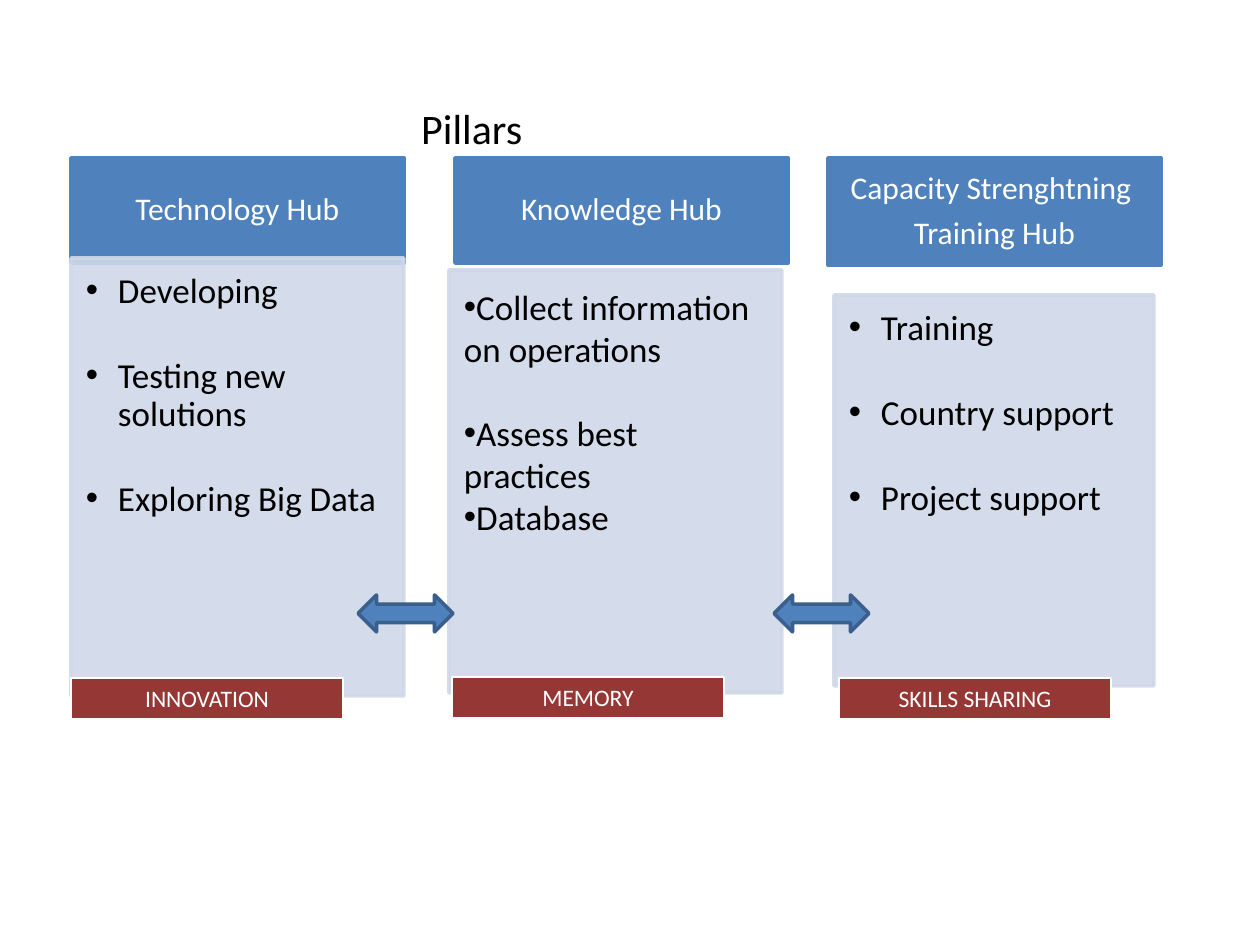
from lxml import etree
from pptx import Presentation
from pptx.dml.color import RGBColor
from pptx.enum.shapes import MSO_SHAPE as SHAPE
from pptx.enum.text import MSO_ANCHOR as ANCHOR, MSO_AUTO_SIZE as AUTO, PP_ALIGN as ALIGN
from pptx.oxml.ns import qn
from pptx.util import Emu, Pt

BLUE, PALE, RED, EDGE = "4F81BD", "D0D8E8", "953735", "3A5F8C"
WHITE, BLACK = "FFFFFF", "000000"
HEADER_INSETS = (18, 10, 18, 10)
PANEL_INSETS = (15, 15, 20, 21)
LABEL_INSETS = (13, 6, 13, 6)

HEADERS = [
    ((71, 158, 333, 105), ["Technology Hub"]),
    ((455, 158, 333, 105), ["Knowledge Hub"]),
    ((828, 158, 333, 107), ["Capacity Strenghtning ", "Training Hub"]),
]
PANELS = [
    (1, (71, 258, 333, 438), 32, 0.9,
     [("Developing", 0), ("Testing new solutions", 27), ("Exploring Big Data", 27)]),
    (2, (449, 270, 333, 423), 0, 1.0,
     [("Collect information on operations", 0), ("Assess best practices", 24),
      ("Database", 0)]),
    (4, (834, 295, 320, 391), 32, 0.9,
     [("Training", 0), ("Country support", 27), ("Project support", 27)]),
]
LABELS = [(71, 678, "INNOVATION"), (452, 677, "MEMORY"), (839, 678, "SKILLS SHARING")]
ARROWS = [358, 774]


def px(n):
    """Turn pixels into EMU."""
    return Emu(round(n * 914400 / 126))


def color(value):
    """Turn a hex string into a colour."""
    return RGBColor.from_string(value)


def place(sp, box):
    """Move and size a shape."""
    sp.left, sp.top, sp.width, sp.height = map(px, box)


def paint(sp, fill, line, width):
    """Set the fill and outline of a shape."""
    sp.fill.solid()
    sp.fill.fore_color.rgb = color(fill)
    sp.line.color.rgb = color(line)
    sp.line.width = Pt(width)


def frame(sp, insets, anchor):
    """Prepare the text frame of a shape."""
    tf = sp.text_frame
    tf.word_wrap = True
    tf.auto_size = AUTO.NONE
    tf.vertical_anchor = anchor
    tf.margin_left, tf.margin_top, tf.margin_right, tf.margin_bottom = map(px, insets)
    return tf


def style(p, size, ink, align, spacing=1.0, before=0, after=0):
    """Format a paragraph and its runs."""
    p.alignment = align
    p.line_spacing = spacing
    p.space_before, p.space_after = Pt(before), Pt(after)
    for r in p.runs:
        r.font.name = "Calibri"
        r.font.size = Pt(size)
        r.font.bold = False
        r.font.color.rgb = color(ink)


def bullet(p, indent):
    """Give a paragraph a hanging bullet."""
    pPr = p._p.get_or_add_pPr()
    pPr.set("marL", str(px(indent)))
    pPr.set("indent", str(-px(indent)))
    etree.SubElement(pPr, qn("a:buFont"), typeface="Arial")
    etree.SubElement(pPr, qn("a:buChar"), char="•")


def add_block(s, kind, box, fill, line, width):
    """Add a painted preset shape."""
    sp = s.shapes.add_shape(kind, *map(px, box))
    sp.shadow.inherit = False
    paint(sp, fill, line, width)
    return sp


def add_title(s, text):
    """Fill the title placeholder."""
    place(s.shapes.title, (113, 96, 727, 63))
    tf = frame(s.shapes.title, LABEL_INSETS, ANCHOR.TOP)
    tf.text = text
    style(tf.paragraphs[0], 24, BLACK, ALIGN.CENTER)


def add_header(s, box, lines):
    """Add the heading block of a pillar."""
    sp = add_block(s, SHAPE.RECTANGLE, box, BLUE, BLUE, 2)
    tf = frame(sp, HEADER_INSETS, ANCHOR.MIDDLE)
    tf.text = "\n".join(lines)
    for p in tf.paragraphs:
        style(p, 18, WHITE, ALIGN.CENTER, spacing=0.9, after=6)


def add_panel(s, idx, box, indent, spacing, items):
    """Turn a body placeholder into a translucent bulleted panel."""
    sp = s.placeholders[idx]
    s.shapes._spTree.append(sp._element)
    place(sp, box)
    paint(sp, PALE, PALE, 2)
    for clr in sp._element.spPr.iter(qn("a:srgbClr")):
        etree.SubElement(clr, qn("a:alpha"), val="90000")
    tf = frame(sp, PANEL_INSETS, ANCHOR.TOP)
    tf.text = "\n".join(text for text, _ in items)
    for p, (_, gap) in zip(tf.paragraphs, items):
        bullet(p, indent)
        style(p, 20, BLACK, ALIGN.LEFT, spacing, before=gap)


def add_label(s, x, y, text):
    """Add the red caption at the foot of a pillar."""
    sp = add_block(s, SHAPE.RECTANGLE, (x, y, 272, 41), RED, WHITE, 0.75)
    tf = frame(sp, LABEL_INSETS, ANCHOR.MIDDLE)
    tf.text = text
    style(tf.paragraphs[0], 13.5, WHITE, ALIGN.CENTER)


def main():
    """Build the pillars slide."""
    prs = Presentation()
    prs.slide_width, prs.slide_height = px(1260), px(945)
    s = prs.slides.add_slide(prs.slide_layouts[4])
    spare = s.placeholders[3]._element
    spare.getparent().remove(spare)
    add_title(s, "Pillars ")
    for header, panel in zip(HEADERS, PANELS):
        add_header(s, *header)
        add_panel(s, *panel)
    for label in LABELS:
        add_label(s, *label)
    for x in ARROWS:
        add_block(s, SHAPE.LEFT_RIGHT_ARROW, (x, 595, 95, 37), BLUE, EDGE, 2)
    prs.save("out.pptx")


if __name__ == "__main__":
    main()
